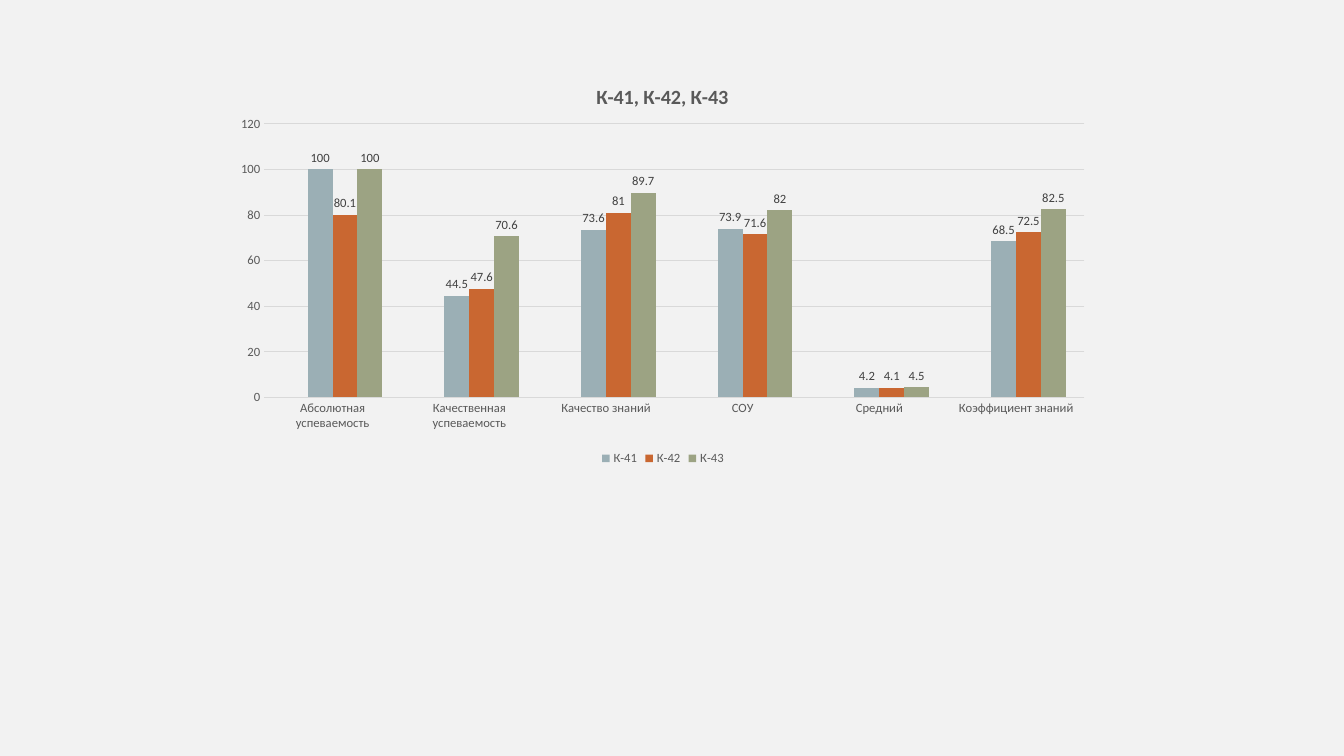
from dataclasses import dataclass

from lxml.etree import SubElement
from pptx import Presentation
from pptx.chart.data import CategoryChartData
from pptx.dml.color import RGBColor
from pptx.enum.chart import XL_CHART_TYPE, XL_LABEL_POSITION, XL_LEGEND_POSITION, XL_TICK_MARK
from pptx.oxml import parse_xml
from pptx.oxml.ns import nsdecls, qn
from pptx.util import Inches, Pt


@dataclass(frozen=True)
class Theme:
    """Colours, font and type sizes of the slide."""
    background: str = "F2F2F2"
    text: str = "595959"
    label: str = "404040"
    grid: str = "D9D9D9"
    font: str = "Calibri"
    title_size: float = 14.4
    small_size: float = 9


THEME = Theme()
TITLE = "К-41, К-42, К-43"
MEASURES = ["Абсолютная успеваемость", "Качественная успеваемость", "Качество знаний",
            "СОУ", "Средний", "Коэффициент знаний"]
SPACER = ("Series 1", "F6A21D", [None] * len(MEASURES))
GROUPS = [
    ("К-41", "9BAFB5", [100, 44.5, 73.6, 73.9, 4.2, 68.5]),
    ("К-42", "C96731", [80.1, 47.6, 81, 71.6, 4.1, 72.5]),
    ("К-43", "9CA383", [100, 70.6, 89.7, 82, 4.5, 82.5]),
]


def format_font(font, color=THEME.text, size=THEME.small_size, bold=False):
    """Apply the theme font with the given colour, size and weight."""
    font.name = THEME.font
    font.size = Pt(size)
    font.bold = bold
    font.color.rgb = RGBColor.from_string(color)


def place_part(part, index, inner=False, **fractions):
    """Give a chart part a manual layout in fractions of the chart."""
    for layout in part.findall(qn("c:layout")):
        part.remove(layout)
    layout = parse_xml(f"<c:layout {nsdecls('c')}><c:manualLayout/></c:layout>")
    settings = {"layoutTarget": "inner"} if inner else {}
    settings.update(xMode="edge", yMode="edge", **fractions)
    for name, value in settings.items():
        SubElement(layout[0], qn(f"c:{name}")).set("val", str(value))
    part.insert(index, layout)


def add_title(chart, text, **fractions):
    """Write the chart title and place it."""
    chart.has_title = True
    frame = chart.chart_title.text_frame
    frame.text = text
    format_font(frame.paragraphs[0].runs[0].font, size=THEME.title_size, bold=True)
    chart.chart_title.include_in_layout = False
    place_part(chart.chart_title._element, 1, **fractions)


def format_axes(chart):
    """Show plain axis labels and horizontal gridlines only."""
    for axis in (chart.category_axis, chart.value_axis):
        axis.major_tick_mark = axis.minor_tick_mark = XL_TICK_MARK.NONE
        axis.format.line.fill.background()
        format_font(axis.tick_labels.font)
    axis = chart.value_axis
    axis.minimum_scale, axis.maximum_scale, axis.major_unit = 0, 120, 20
    axis.has_major_gridlines = True
    line = axis.major_gridlines.format.line
    line.color.rgb = RGBColor.from_string(THEME.grid)
    line.width = Pt(0.75)


def add_legend(chart, hidden_entry):
    """Put the legend at the bottom and hide one entry."""
    chart.has_legend = True
    legend = chart.legend
    legend.position = XL_LEGEND_POSITION.BOTTOM
    legend.include_in_layout = False
    format_font(legend.font)
    entry = parse_xml(f'<c:legendEntry {nsdecls("c")}><c:idx val="{hidden_entry}"/>'
                      '<c:delete val="1"/></c:legendEntry>')
    legend._element.find(qn("c:legendPos")).addnext(entry)


def format_series(series, color, labelled):
    """Colour the columns and label their values."""
    series.format.fill.solid()
    series.format.fill.fore_color.rgb = RGBColor.from_string(color)
    series.invert_if_negative = False
    if labelled:
        labels = series.data_labels
        labels.show_value = True
        labels.position = XL_LABEL_POSITION.OUTSIDE_END
        format_font(labels.font, color=THEME.label)


def add_column_chart(slide, left, top, width, height):
    """Add the clustered columns comparing the groups."""
    columns = [SPACER, *GROUPS]
    data = CategoryChartData()
    data.categories = MEASURES
    for name, _, values in columns:
        data.add_series(name, values)
    chart = slide.shapes.add_chart(
        XL_CHART_TYPE.COLUMN_CLUSTERED, Inches(left), Inches(top),
        Inches(width), Inches(height), data).chart
    format_font(chart.font)
    plot = chart.plots[0]
    plot.gap_width, plot.overlap, plot.vary_by_categories = 150, 0, False
    for series, column in zip(plot.series, columns):
        format_series(series, column[1], labelled=column is not SPACER)
    format_axes(chart)
    add_legend(chart, hidden_entry=columns.index(SPACER))
    add_title(chart, TITLE, x=0.42, y=0.05)
    plot_area = chart._chartSpace.chart.plotArea
    place_part(plot_area, 0, inner=True, x=0.046, y=0.157, w=0.934, h=0.667)


def main():
    """Build and save the slide."""
    presentation = Presentation()
    presentation.slide_width = Inches(13.33)
    presentation.slide_height = Inches(7.5)
    slide = presentation.slides.add_slide(presentation.slide_layouts[6])
    slide.background.fill.solid()
    slide.background.fill.fore_color.rgb = RGBColor.from_string(THEME.background)
    add_column_chart(slide, 2.22, 0.59, 8.71, 4.07)
    presentation.save("out.pptx")


if __name__ == "__main__":
    main()
